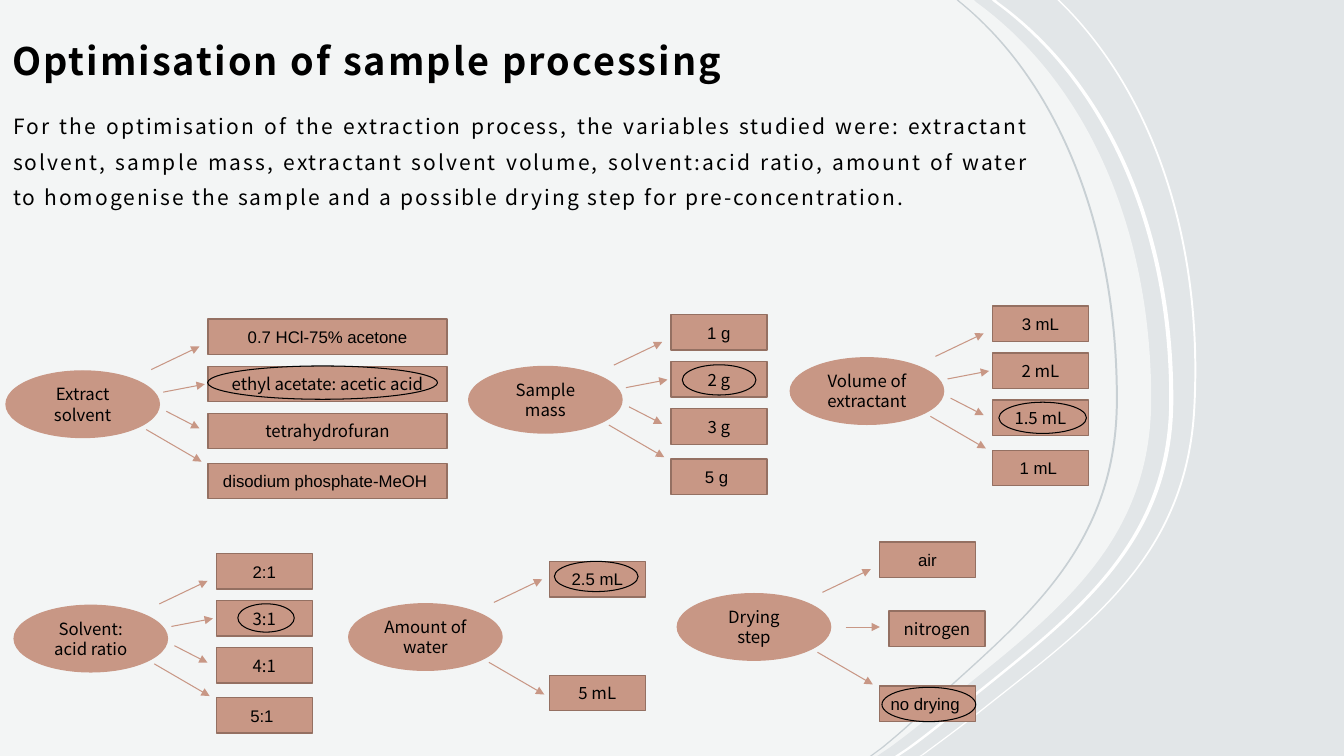
from pptx import Presentation
from pptx.dml.color import RGBColor
from pptx.enum import shapes, text
from pptx.oxml.ns import qn
from pptx.util import Pt
from lxml import etree

COLORS = {"page": "E2E6E8", "white": "FFFFFF", "thread": "C8D0D4",
          "clay": "C89785", "edge": "947062", "black": "000000"}
NOTO, ARIAL = "Noto Sans CJK JP", "Arial"

TITLE = "Optimisation of sample processing"
BODY = ("For the optimisation of the extraction process, the variables studied were: "
        "extractant solvent, sample mass, extractant solvent volume, solvent:acid ratio, "
        "amount of water to homogenise the sample and a possible drying step for "
        "pre-concentration.")

# Edges run from top to bottom: a line, three Bézier curves, a line.
OUTER = [(756.7, 0), (758.9, 2.2), (825.1, 67.7), (859.7, 172.8), (853.9, 289.4),
         (848.9, 399.6), (775.4, 448.6), (700.6, 508.3),
         (686.9, 519.1), (673.2, 529.2), (659.5, 539.3), (658.1, 540)]
MIDDLE = [(711.4, 0), (712.8, 1.4), (793.4, 59.8), (838.1, 164.9), (838.1, 285.1),
          (838.1, 391), (765.4, 441.4), (691.2, 501.8),
          (678.2, 513.4), (664.6, 524.2), (650.9, 534.2), (642.2, 540)]
INNER = [(684.7, 0), (686.2, 1.4), (758.2, 59.8), (798.5, 164.9), (798.5, 285.1),
         (798.5, 391), (733, 441.4), (666.7, 501.8),
         (655.2, 513.4), (643, 524.2), (630.7, 534.2), (622.8, 540)]
EDGE_PARTS = "LCCCL"
BANDS = [(OUTER, 1.4, "white"), (MIDDLE, 2.9, "white"), (INNER, 1.4, "thread")]
PANEL_SHIFT = -15.8

VARIABLE_SIZE = (109.5, 47.5)
OPTION_HEIGHT = 25.3
OPTION_DX = 144.4
# Slot: option offset (x, y), arrow (x1, y1, x2, y2), font; all from the variable's corner.
UP, DOWN = (103.7, -1, 138.2, -17.5), (100.1, 41.8, 139.7, 64.8)
SLOTS = {
    "first": (OPTION_DX, -37, UP, ARIAL),
    "second": (OPTION_DX, -3.4, (112.3, 15.1, 142, 9.4), NOTO),
    "third": (OPTION_DX, 30.2, (114.5, 28.8, 138.2, 41), NOTO),
    "last": (OPTION_DX, 66, DOWN, ARIAL),
    "upper": (143.3, -30.2, UP, ARIAL),
    "lower": (143.3, 51, DOWN, NOTO),
    "centre": (151.2, 12.2, (120.2, 23.8, 144.7, 23.8), NOTO),
}
FOUR = ("first", "second", "third", "last")

# Variable, corner, option width, slots, options, ring around the chosen option
VARIABLES = [
    ("Extract solvent", (4.3, 265), 170.6, FOUR,
     ("0.7 HCl-75% acetone", "ethyl acetate: acetic acid", "tetrahydrofuran",
      "disodium phosphate-MeOH "), (148.3, 261.4, 164.2, 23.8)),
    ("Sample mass", (334.8, 261.8), 68.6, FOUR,
     ("1 g", "2 g", "3 g", "5 g "), (487.4, 260.6, 52.6, 21.6)),
    ("Volume of extractant", (564.5, 255.6), 68.6, FOUR,
     ("3 mL", "2 mL", "1.5 mL", "1 mL "), (713.5, 287.3, 62.6, 22.3)),
    ("Solvent: acid ratio", (10.1, 432.4), 68.6, FOUR,
     ("2:1", "3:1", "4:1", "5:1 "), (169.9, 431.3, 40.3, 20.2)),
    ("Amount of water", (249.1, 431.3), 68.6, ("upper", "lower"),
     ("2.5 mL", "5 mL"), (396, 401, 59.8, 21.6)),
    ("Drying step", (483.8, 424.1), 68.6, ("first", "centre", "last"),
     ("air", "nitrogen", "no drying "), (630, 491, 67, 24.5)),
]


def rgb(name):
    return RGBColor.from_string(COLORS[name])


def shifted(points, dx):
    return [(x + dx, y) for x, y in points]


def add_outline(page, points, parts, color):
    """Draw a closed outline; parts has L for a line and C for a curve of three points."""
    corners = [(Pt(x), Pt(y)) for x, y in points]
    builder = page.shapes.build_freeform(*corners[0], scale=1.0)
    builder.add_line_segments(corners[1:], close=True)
    outline = builder.convert_to_shape()
    segments = iter(list(outline.element.iter(qn("a:lnTo"))))
    for part in parts:
        segment = next(segments)
        if part == "C":
            curve = etree.Element(qn("a:cubicBezTo"))
            segment.addprevious(curve)
            for piece in (segment, next(segments), next(segments)):
                curve.append(piece[0])
                piece.getparent().remove(piece)
    outline.shadow.inherit = False
    outline.fill.solid()
    outline.fill.fore_color.rgb = rgb(color)
    outline.line.fill.background()
    return outline


def add_backdrop(page):
    page.background.fill.solid()
    page.background.fill.fore_color.rgb = rgb("page")
    side = shifted(MIDDLE, PANEL_SHIFT)
    panel = add_outline(page, [(0, 0)] + side + [(0, 540)], "L" + EDGE_PARTS + "L", "white")
    color = next(panel.element.iter(qn("a:srgbClr")))
    etree.SubElement(color, qn("a:alpha"), val="60000")
    for edge, width, band_color in BANDS:
        add_outline(page, edge + shifted(edge, -width)[::-1],
                    EDGE_PARTS + "L" + EDGE_PARTS, band_color)


def style_span(span, font, size, bold=False):
    for name, value in {"name": font, "size": Pt(size), "bold": bold}.items():
        setattr(span.font, name, value)
    span.font.color.rgb = rgb("black")
    etree.SubElement(span.font._element, qn("a:ea"), typeface=font)


def fill_placeholder(box, frame, words, size, anchor, paragraph_format, bold=False):
    box.left, box.top, box.width, box.height = map(Pt, frame)
    margins = {"margin_left": 8.6, "margin_top": 8.6, "margin_right": 8.6, "margin_bottom": 7.2}
    for name, value in margins.items():
        setattr(box.text_frame, name, Pt(value))
    box.text_frame.word_wrap = True
    box.text_frame.auto_size = text.MSO_AUTO_SIZE.NONE
    box.text_frame.vertical_anchor = anchor
    para = box.text_frame.paragraphs[0]
    for name, value in paragraph_format.items():
        setattr(para, name, value)
    properties = para._p.get_or_add_pPr()
    properties.set("marL", "0")
    properties.set("indent", "0")
    etree.SubElement(properties, qn("a:buNone"))
    span = para.add_run()
    span.text = words
    style_span(span, NOTO, size, bold)
    span.font._element.set("spc", "150")


def add_label(page, kind, frame, words, font, edge):
    box = page.shapes.add_shape(kind, *map(Pt, frame))
    box.shadow.inherit = False
    box.fill.solid()
    box.fill.fore_color.rgb = rgb("clay")
    box.line.color.rgb = rgb(edge)
    box.line.width = Pt(1)
    box.text_frame.word_wrap = True
    box.text_frame.vertical_anchor = text.MSO_ANCHOR.MIDDLE
    para = box.text_frame.paragraphs[0]
    para.alignment = text.PP_ALIGN.CENTER
    span = para.add_run()
    span.text = words
    style_span(span, font, 12)


def add_arrow(page, ends):
    arrow = page.shapes.add_connector(shapes.MSO_CONNECTOR.STRAIGHT, *map(Pt, ends))
    arrow.line.color.rgb = rgb("clay")
    arrow.line.width = Pt(0.75)
    etree.SubElement(arrow.line._get_or_add_ln(), qn("a:tailEnd"), type="triangle")
    etree.SubElement(arrow._element.spPr, qn("a:effectLst"))


def add_ring(page, frame):
    ring = page.shapes.add_shape(shapes.MSO_SHAPE.OVAL, *map(Pt, frame))
    ring.shadow.inherit = False
    ring.fill.background()
    ring.line.color.rgb = rgb("black")
    ring.line.width = Pt(0.75)


def main():
    deck = Presentation()
    deck.slide_width, deck.slide_height = Pt(960), Pt(540)
    page = deck.slides.add_slide(deck.slide_layouts[1])
    add_backdrop(page)
    title, body = page.placeholders
    fill_placeholder(title, (0, 16.6, 691.2, 49.7), TITLE, 27, text.MSO_ANCHOR.BOTTOM,
                     {"alignment": text.PP_ALIGN.LEFT, "line_spacing": 1.2}, bold=True)
    fill_placeholder(body, (0.7, 65.5, 743.8, 113.8), BODY, 15, text.MSO_ANCHOR.TOP,
                     {"alignment": text.PP_ALIGN.JUSTIFY, "line_spacing": 1.4,
                      "space_before": Pt(9.3)})
    # The text stands in front of the backdrop.
    for box in (title, body):
        page.shapes._spTree.append(box.element)
    for variable, (x, y), width, slots, options, ring in VARIABLES:
        add_label(page, shapes.MSO_SHAPE.OVAL, (x, y, *VARIABLE_SIZE), variable, NOTO, "clay")
        for slot, option in zip(slots, options):
            dx, dy, (x1, y1, x2, y2), font = SLOTS[slot]
            add_label(page, shapes.MSO_SHAPE.RECTANGLE,
                      (x + dx, y + dy, width, OPTION_HEIGHT), option, font, "edge")
            add_arrow(page, (x + x1, y + y1, x + x2, y + y2))
        add_ring(page, ring)
    deck.save("out.pptx")


if __name__ == "__main__":
    main()
